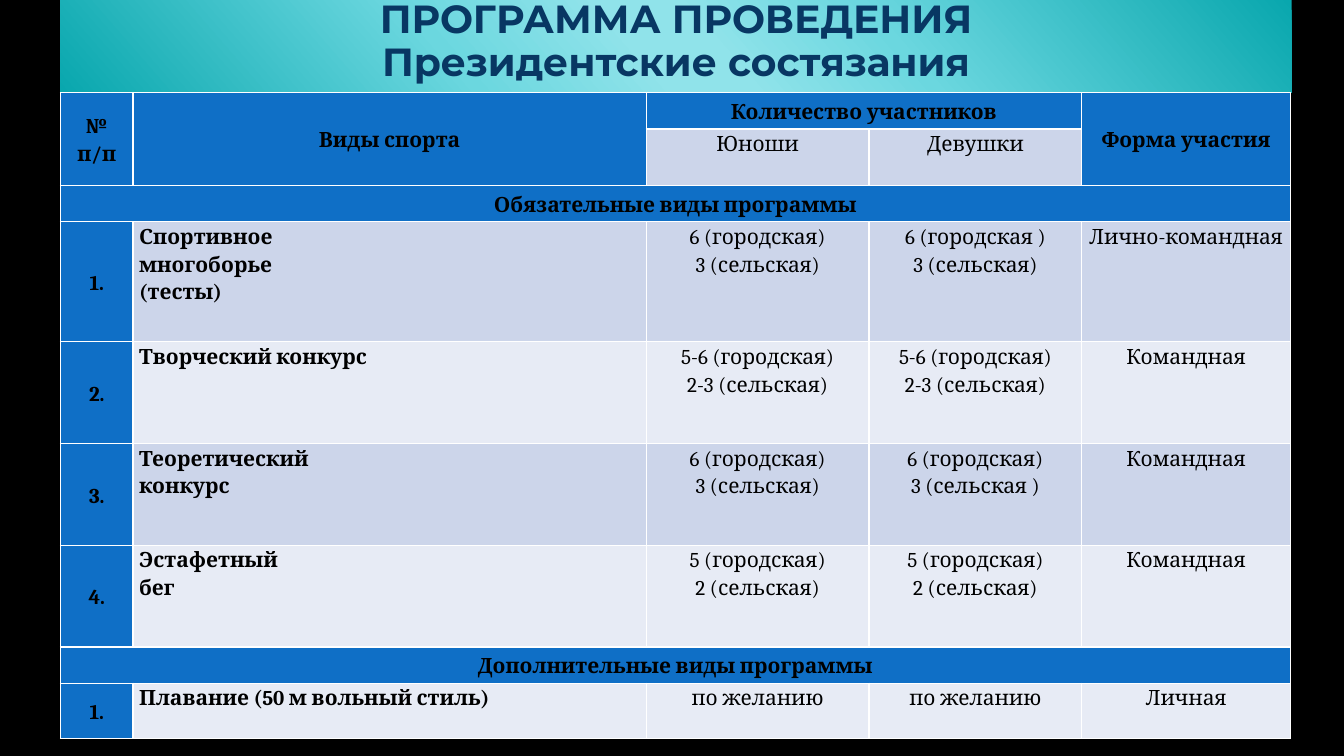
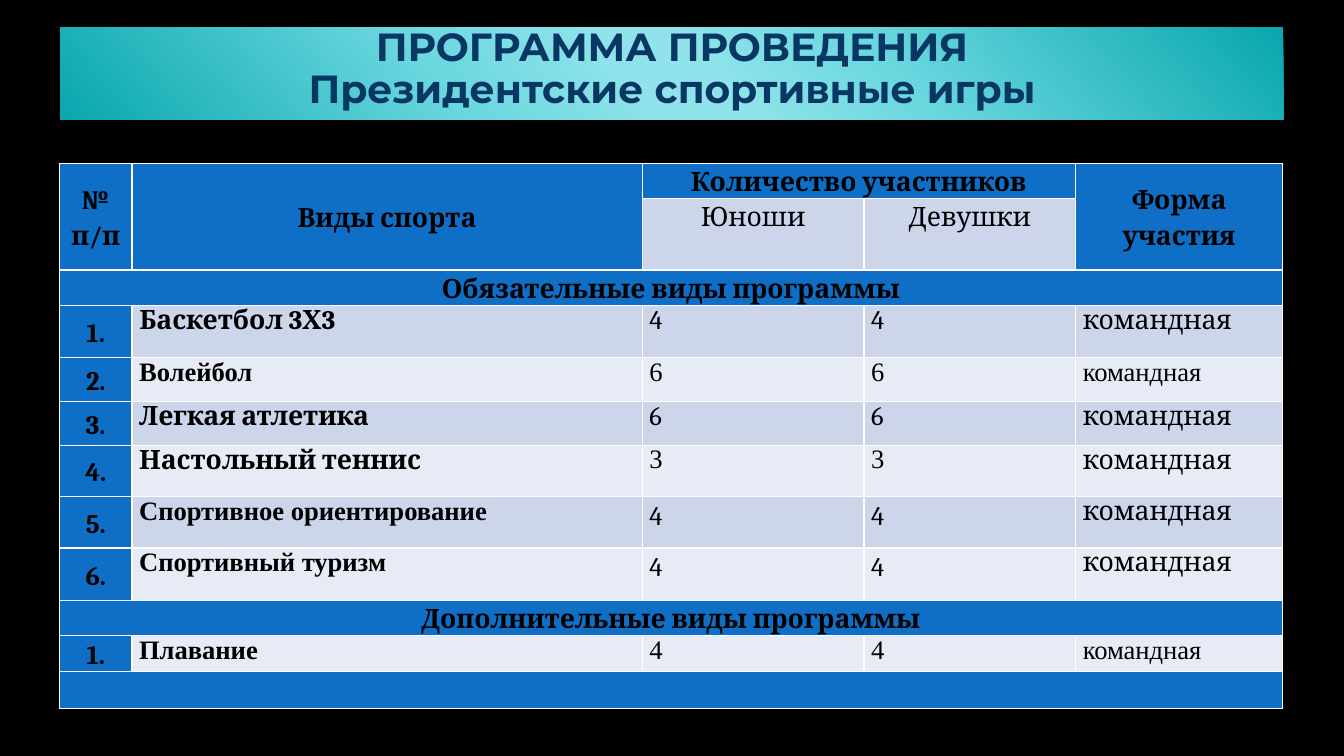
from dataclasses import dataclass, replace

from lxml import etree
from pptx import Presentation
from pptx.dml.color import RGBColor
from pptx.enum.text import MSO_ANCHOR, MSO_AUTO_SIZE, PP_ALIGN
from pptx.oxml import parse_xml
from pptx.oxml.ns import nsdecls, qn
from pptx.util import Inches, Pt

BLACK = RGBColor(0x00, 0x00, 0x00)
WHITE = RGBColor(0xFF, 0xFF, 0xFF)
NAVY = RGBColor(0x08, 0x37, 0x63)
BLUE = RGBColor(0x0F, 0x6F, 0xC6)
BAND = RGBColor(0xCC, 0xD5, 0xEA)
PALE_BAND = RGBColor(0xE7, 0xEB, 0xF5)
TEAL = RGBColor(0x09, 0xA7, 0xAE)
AQUA = RGBColor(0x6B, 0xD7, 0xDF)
LIGHT_AQUA = RGBColor(0x90, 0xE3, 0xEA)
BANNER_STOPS = [(0, TEAL), (33, AQUA), (47, LIGHT_AQUA),
                (53, LIGHT_AQUA), (68, AQUA), (100, TEAL)]
BANNER_ANGLE = 139
BANNER_HEIGHT = 0.92

TITLE_FONT = "Montserrat"
SERIF = "Cambria"
ROMAN = "Times New Roman"


@dataclass(frozen=True)
class CellStyle:
    size: int
    font: str = SERIF
    bold: bool = False
    align: PP_ALIGN = PP_ALIGN.CENTER
    anchor: MSO_ANCHOR = MSO_ANCHOR.TOP
    spacing: float = 1.15
    after: int = 0
    inset: float = 0.06


def header_style(size):
    return CellStyle(size, bold=True, anchor=MSO_ANCHOR.MIDDLE)


def set_background(deck):
    fill = deck.slide_master.background.fill
    fill.solid()
    fill.fore_color.rgb = BLACK


def fill_with_gradient(shape):
    stops = "".join(
        f'<a:gs pos="{share * 1000}"><a:srgbClr val="{colour}"/></a:gs>'
        for share, colour in BANNER_STOPS)
    gradient = parse_xml(
        f'<a:gradFill {nsdecls("a")} rotWithShape="1"><a:gsLst>{stops}</a:gsLst>'
        f'<a:lin ang="{BANNER_ANGLE * 60000}" scaled="0"/></a:gradFill>')
    shape._element.spPr.append(gradient)


def add_banner_slide(deck, lines, left, top, width):
    page = deck.slides.add_slide(deck.slide_layouts[5])
    banner = page.shapes.title
    banner.left, banner.top = Inches(left), Inches(top)
    banner.width, banner.height = Inches(width), Inches(BANNER_HEIGHT)
    fill_with_gradient(banner)
    frame = banner.text_frame
    frame.text = "\n".join(lines)
    frame.auto_size = MSO_AUTO_SIZE.NONE
    frame.word_wrap = True
    frame.vertical_anchor = MSO_ANCHOR.TOP
    frame.margin_top = frame.margin_bottom = 0
    for para in frame.paragraphs:
        para.alignment = PP_ALIGN.CENTER
        para.line_spacing = 0.9
        para.space_before = Pt(0)
        format_runs(para, TITLE_FONT, 28, True, NAVY)
    return page


def format_runs(para, font, size, bold, colour):
    for span in para.runs:
        span.font.name = font
        span.font.size = Pt(size)
        span.font.bold = bold
        span.font.color.rgb = colour


def write_cell(cell, text, style):
    cell.vertical_anchor = style.anchor
    cell.margin_left = cell.margin_right = Inches(style.inset)
    cell.margin_top = cell.margin_bottom = 0
    cell.text_frame.text = text
    for para in cell.text_frame.paragraphs:
        para.alignment = style.align
        para.line_spacing = style.spacing
        para.space_after = Pt(style.after)
        format_runs(para, style.font, style.size, style.bold, BLACK)


def paint_cell(cell, colour):
    cell.fill.solid()
    cell.fill.fore_color.rgb = colour
    properties = cell._tc.get_or_add_tcPr()
    for place, side in enumerate(("lnL", "lnR", "lnT", "lnB")):
        line = etree.Element(qn(f"a:{side}"), w=str(Pt(1)))
        fill = etree.SubElement(line, qn("a:solidFill"))
        etree.SubElement(fill, qn("a:srgbClr"), val=str(WHITE))
        properties.insert(place, line)


def add_grid(page, left, top, columns, rows):
    frame = page.shapes.add_table(
        len(rows), len(columns), Inches(left), Inches(top),
        Inches(sum(columns)), Inches(sum(rows)))
    table = frame.table
    table.first_row = table.horz_banding = False
    for column, width in zip(table.columns, columns):
        column.width = Inches(width)
    for row, height in zip(table.rows, rows):
        row.height = Inches(height)
    return table


def write_header(table, size):
    style = header_style(size)
    for column, text in ((0, "№ п/п"), (1, "Виды спорта"), (4, "Форма участия")):
        table.cell(0, column).merge(table.cell(1, column))
        write_cell(table.cell(0, column), text, style)
    table.cell(0, 2).merge(table.cell(0, 3))
    write_cell(table.cell(0, 2), "Количество участников", style)
    for column, text in ((2, "Юноши"), (3, "Девушки")):
        write_cell(table.cell(1, column), text, CellStyle(size))


def write_section(table, row, text, size):
    table.cell(row, 0).merge(table.cell(row, 4))
    write_cell(table.cell(row, 0), text, replace(header_style(size), after=10))


def add_programme(page, left, top, columns, rows, size, sections):
    table = add_grid(page, left, top, columns, rows)
    write_header(table, size)
    blue_cells = {(0, column) for column in range(5)} | {(1, 0), (1, 1), (1, 4)}
    row = 2
    for heading, entries in sections:
        write_section(table, row, heading, size)
        blue_cells |= {(row, column) for column in range(5)}
        for number, entry in enumerate(entries, 1):
            row += 1
            blue_cells.add((row, 0))
            write_cell(table.cell(row, 0), f"{number}.",
                       replace(header_style(size), after=10))
            for column, (text, style) in enumerate(entry, 1):
                write_cell(table.cell(row, column), text, style)
        row += 1
    for row in range(len(rows)):
        for column in range(len(columns)):
            band = BAND if row % 2 else PALE_BAND
            if row == 1:
                band = BAND
            paint_cell(table.cell(row, column),
                       BLUE if (row, column) in blue_cells else band)


def contest(name, boys, girls, form):
    value = CellStyle(15)
    title = replace(value, bold=True, align=PP_ALIGN.LEFT)
    return [(name, title), (boys, value), (girls, value), (form, value)]


def game(name, players, name_font=SERIF, number_font=SERIF, form_font=SERIF,
         number_spacing=1.0):
    value = CellStyle(19, align=PP_ALIGN.LEFT, spacing=1.0, inset=0.07)
    number = replace(value, font=number_font, spacing=number_spacing)
    return [(name, replace(value, font=name_font, bold=True)),
            (players, number), (players, number),
            ("командная", replace(value, font=form_font))]


def build_contests(deck):
    page = add_banner_slide(
        deck, ["ПРОГРАММА ПРОВЕДЕНИЯ", "Президентские состязания"], 0.6, 0, 12.21)
    sections = [
        ("Обязательные виды программы", [
            contest("Спортивное\nмногоборье\n(тесты)", "6 (городская)\n3 (сельская)",
                    "6 (городская )\n3 (сельская)", "Лично-командная"),
            contest("Творческий конкурс", "5-6 (городская)\n2-3 (сельская)",
                    "5-6 (городская)\n2-3 (сельская)", "Командная"),
            contest("Теоретический\nконкурс", "6 (городская)\n3 (сельская)",
                    "6 (городская)\n3 (сельская )", "Командная"),
            contest("Эстафетный\nбег", "5 (городская)\n2 (сельская)",
                    "5 (городская)\n2 (сельская)", "Командная"),
        ]),
        ("Дополнительные виды программы", [
            contest("Плавание (50 м вольный стиль)", "по желанию",
                    "по желанию", "Личная"),
        ]),
    ]
    add_programme(page, 0.6, 0.92, [0.72, 5.09, 2.21, 2.11, 2.07],
                  [0.36, 0.56, 0.36, 1.19, 1.01, 1.01, 1.01, 0.36, 0.55],
                  15, sections)


def build_games(deck):
    page = add_banner_slide(
        deck, ["ПРОГРАММА ПРОВЕДЕНИЯ", "Президентские спортивные игры"],
        0.6, 0.27, 12.13)
    sections = [
        ("Обязательные виды программы", [
            game("Баскетбол 3Х3", "4"),
            game("Волейбол", "6", ROMAN, ROMAN, ROMAN),
            game("Легкая атлетика", "6"),
            game("Настольный теннис", "3", number_font=ROMAN),
            game("Спортивное ориентирование", "4", ROMAN, number_spacing=1.15),
            game("Спортивный туризм", "4", ROMAN, number_spacing=1.15),
        ]),
        ("Дополнительные виды программы", [
            game("Плавание", "4", ROMAN, ROMAN, ROMAN),
        ]),
        ("", []),
    ]
    add_programme(page, 0.59, 1.62, [0.72, 5.06, 2.2, 2.1, 2.05],
                  [0.34, 0.71, 0.34, 0.52, 0.44, 0.43, 0.51, 0.51, 0.52,
                   0.34, 0.36, 0.36],
                  19, sections)


def main():
    deck = Presentation()
    deck.slide_width, deck.slide_height = Inches(13.33), Inches(7.5)
    set_background(deck)
    build_contests(deck)
    build_games(deck)
    deck.save("out.pptx")


if __name__ == "__main__":
    main()
